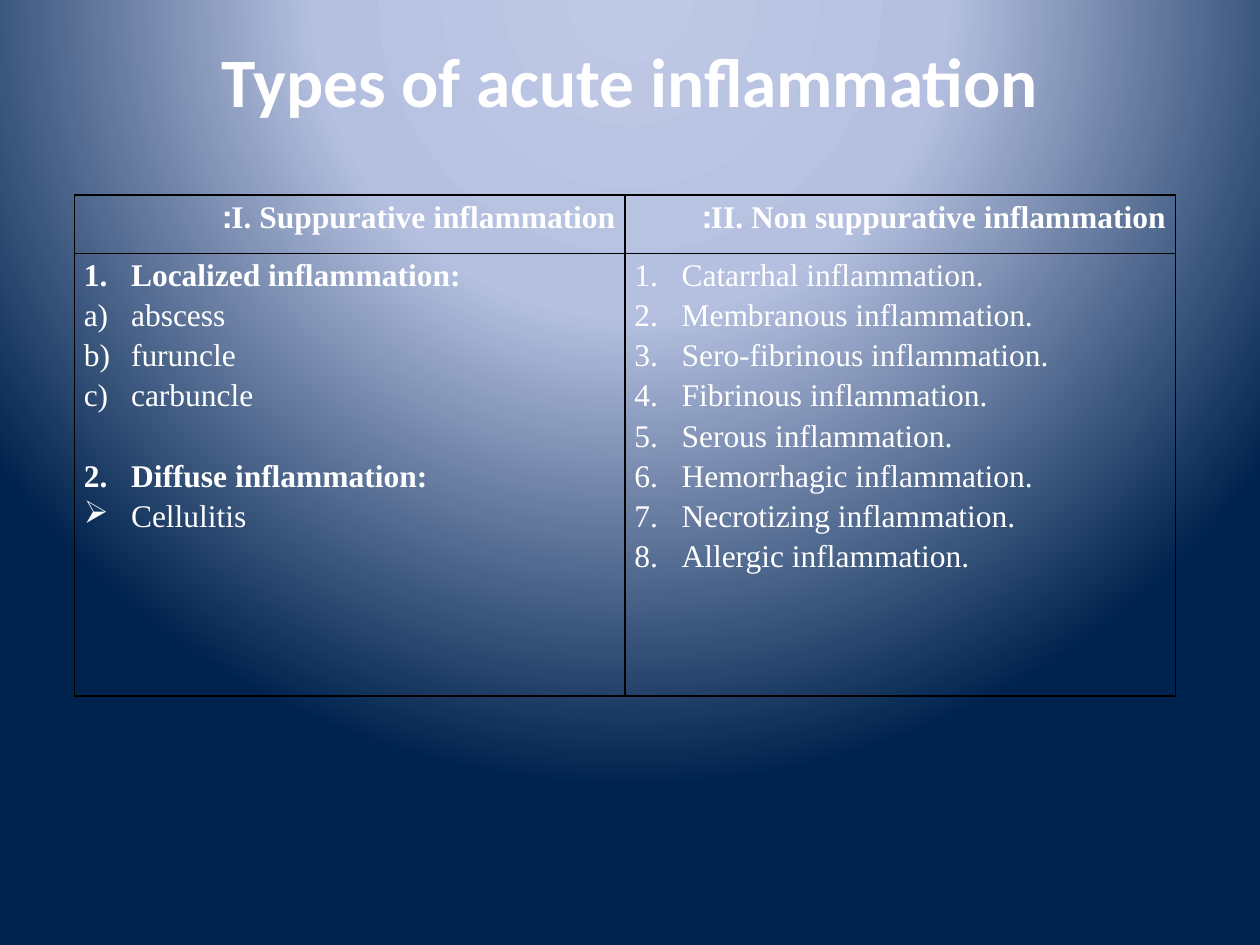
from lxml import etree
from pptx import Presentation
from pptx.dml.color import RGBColor
from pptx.enum import text as t
from pptx.oxml import parse_xml
from pptx.oxml.ns import nsdecls, qn
from pptx.util import Pt

# Content: each item is (text, marker, first number, bold)
TITLE = "Types of acute inflammation"
HEADINGS = ["I. Suppurative inflammation:", "II. Non suppurative inflammation:"]
SUPPURATIVE = [
    ("Localized inflammation:", "arabicPeriod", 1, True),
    ("abscess", "alphaLcParenR", 1, False),
    ("furuncle", "alphaLcParenR", 1, False),
    ("carbuncle", "alphaLcParenR", 1, False),
    ("Diffuse inflammation:", "arabicPeriod", 2, True),
    ("Cellulitis", "➢", None, False),
]
NON_SUPPURATIVE = [
    (f"{kind} inflammation.", "arabicPeriod", 1, False)
    for kind in ("Catarrhal", "Membranous", "Sero-fibrinous", "Fibrinous",
                 "Serous", "Hemorrhagic", "Necrotizing", "Allergic")
]

THEME = {
    "text": "FFFFFF", "border": "000000",
    "glow": [(0, "BFC9E5"), (40, "B5C0E0"), (100, "00234D")],
    "title_font": "Calibri", "title_size": 39.6,
    "body_font": "Times New Roman", "body_size": 18,
}

# Layout in points
SLIDE_W, SLIDE_H = 720, 540
TITLE_BOX = (36, 21.6, 648, 90)
TABLE_LEFT, TABLE_TOP = 42.5, 111.4
COLUMN_W, ROW_HEIGHTS = 314.6, (33.4, 253)
CELL_INSET, INDENT, LINE_SPACING, GROUP_GAP = 5.4, 27, 1.15, 22.9


def write(paragraph, words, *, font=THEME["body_font"], size=THEME["body_size"],
          bold=False, align=None, rtl=False, spacing=None, before=None,
          marker=None, start=None):
    """Fill one paragraph and format it, with an optional list marker."""
    run = paragraph.add_run()
    run.text = words
    run.font.name, run.font.size, run.font.bold = font, Pt(size), bold
    run.font.color.rgb = RGBColor.from_string(THEME["text"])
    paragraph.alignment = align
    if spacing:
        paragraph.line_spacing = spacing
    if before:
        paragraph.space_before = Pt(before)
    props = paragraph._p.get_or_add_pPr()
    if rtl:
        props.set("rtl", "1")
    if marker:
        props.set("marL", str(Pt(INDENT)))
        props.set("indent", str(-Pt(INDENT)))
        if start is None:
            etree.SubElement(props, qn("a:buChar"), char=marker)
        else:
            numbering = etree.SubElement(props, qn("a:buAutoNum"), type=marker)
            if start > 1:
                numbering.set("startAt", str(start))


def paint_background(slide):
    """Radial glow centred above the top edge."""
    slide.background.fill.solid()
    holder = slide.background._cSld.bg.bgPr
    stops = "".join(
        f'<a:gs pos="{place * 1000}"><a:srgbClr val="{colour}"/></a:gs>'
        for place, colour in THEME["glow"])
    glow = parse_xml(
        f'<a:gradFill {nsdecls("a")} rotWithShape="1"><a:gsLst>{stops}</a:gsLst>'
        '<a:path path="circle"><a:fillToRect l="50000" t="-80000" r="50000"'
        ' b="180000"/></a:path></a:gradFill>')
    holder.replace(holder.find(qn("a:solidFill")), glow)


def style_cell(cell):
    """Clear fill, thin border on all sides, narrow insets."""
    cell.margin_left = cell.margin_right = Pt(CELL_INSET)
    cell.margin_top = cell.margin_bottom = 0
    props = cell._tc.get_or_add_tcPr()
    for side in ("lnL", "lnR", "lnT", "lnB"):
        props.append(parse_xml(
            f'<a:{side} {nsdecls("a")} w="{Pt(1)}"><a:solidFill>'
            f'<a:srgbClr val="{THEME["border"]}"/></a:solidFill></a:{side}>'))
    cell.fill.background()


def add_title(slide):
    title = slide.shapes.add_textbox(*map(Pt, TITLE_BOX)).text_frame
    title.word_wrap = True
    title.margin_top = 0
    title.vertical_anchor = t.MSO_ANCHOR.TOP
    write(title.paragraphs[0], TITLE, font=THEME["title_font"],
          size=THEME["title_size"], bold=True, align=t.PP_ALIGN.CENTER)


def add_types_table(slide):
    columns = [SUPPURATIVE, NON_SUPPURATIVE]
    types = slide.shapes.add_table(
        len(ROW_HEIGHTS), len(columns), Pt(TABLE_LEFT), Pt(TABLE_TOP),
        Pt(COLUMN_W * len(columns)), Pt(sum(ROW_HEIGHTS))).table
    types.first_row = types.horz_banding = False
    for row, height in zip(types.rows, ROW_HEIGHTS):
        row.height = Pt(height)
    for cell in types.iter_cells():
        style_cell(cell)

    for col, (heading, items) in enumerate(zip(HEADINGS, columns)):
        types.columns[col].width = Pt(COLUMN_W)
        write(types.cell(0, col).text_frame.paragraphs[0], heading, bold=True,
              align=t.PP_ALIGN.JUSTIFY, rtl=True, spacing=LINE_SPACING)
        body = types.cell(1, col).text_frame
        for i, (words, marker, start, bold) in enumerate(items):
            paragraph = body.add_paragraph() if i else body.paragraphs[0]
            write(paragraph, words, bold=bold, marker=marker, start=start,
                  spacing=LINE_SPACING,
                  before=GROUP_GAP if bold and i else None)


def main():
    deck = Presentation()
    deck.slide_width, deck.slide_height = Pt(SLIDE_W), Pt(SLIDE_H)
    slide = deck.slides.add_slide(deck.slide_layouts[6])
    paint_background(slide)
    add_title(slide)
    add_types_table(slide)
    deck.save("out.pptx")


if __name__ == "__main__":
    main()
